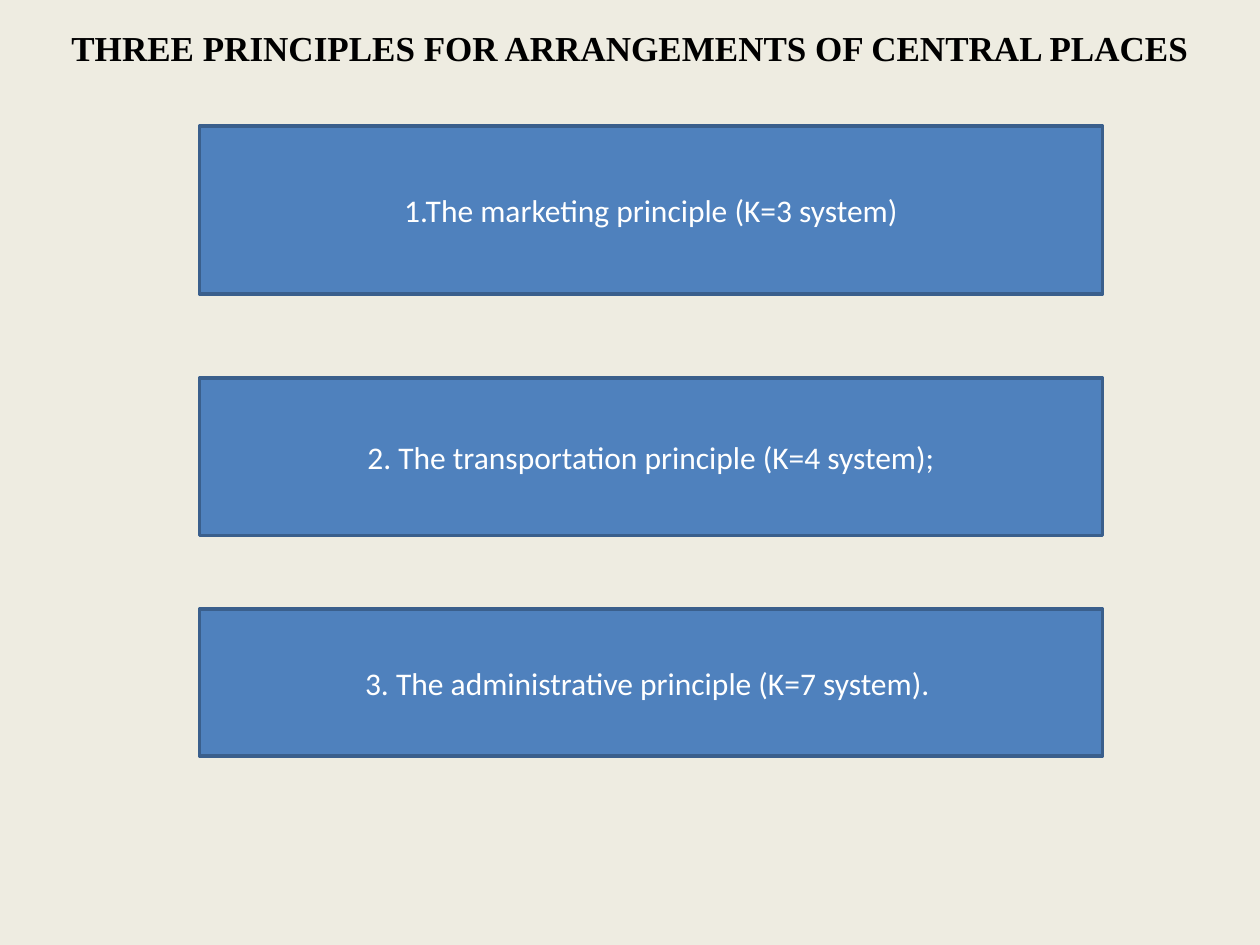
from dataclasses import dataclass

import pptx
import pptx.dml.color
import pptx.enum.shapes
import pptx.enum.text
import pptx.util

CELL = pptx.util.Inches(1) // 12  # the slide is a grid of 120 columns by 90 rows
COLUMNS, ROWS = 120, 90
BOX_COLUMN, BOX_COLUMNS = 19, 86


@dataclass
class Principle:
    text: str
    row: int
    rows: int


PRINCIPLES = [
    Principle("1.The marketing principle (K=3 system)", 12, 16),
    Principle("2. The transportation principle (K=4 system);", 36, 15),
    Principle("3. The administrative principle (K=7 system). ", 58, 14),
]


def color(value: str) -> pptx.dml.color.RGBColor:
    return pptx.dml.color.RGBColor.from_string(value)


def place(shape, column: int, row: int, columns: int, rows: int) -> None:
    shape.left, shape.top = column * CELL, row * CELL
    shape.width, shape.height = columns * CELL, rows * CELL


def write(shape, text: str, font: str, size: int, text_color: str, bold: bool = False) -> None:
    """Set one centred line of text in the middle of the shape."""
    frame = shape.text_frame
    frame.text = text
    frame.word_wrap = True
    frame.auto_size = pptx.enum.text.MSO_AUTO_SIZE.NONE
    frame.vertical_anchor = pptx.enum.text.MSO_ANCHOR.MIDDLE
    paragraph = frame.paragraphs[0]
    paragraph.alignment = pptx.enum.text.PP_ALIGN.CENTER
    run_font = paragraph.runs[0].font
    run_font.name = font
    run_font.size = pptx.util.Pt(size)
    run_font.bold = bold
    run_font.color.rgb = color(text_color)


def draw_principle(slide, principle: Principle) -> None:
    box = slide.shapes.add_shape(pptx.enum.shapes.MSO_SHAPE.RECTANGLE, 0, 0, CELL, CELL)
    place(box, BOX_COLUMN, principle.row, BOX_COLUMNS, principle.rows)
    box.shadow.inherit = False
    box.fill.solid()
    box.fill.fore_color.rgb = color("4F81BD")
    box.line.color.rgb = color("3A5F8C")
    box.line.width = pptx.util.Pt(2)
    write(box, principle.text, "Calibri", 18, "FFFFFF")


def main() -> None:
    presentation = pptx.Presentation()
    presentation.slide_width = COLUMNS * CELL
    presentation.slide_height = ROWS * CELL
    slide = presentation.slides.add_slide(presentation.slide_layouts.get_by_name("Title Only"))
    slide.background.fill.solid()
    slide.background.fill.fore_color.rgb = color("EEECE1")

    title = slide.shapes.title
    place(title, 3, -3, 114, 15)
    write(title, "THREE PRINCIPLES FOR ARRANGEMENTS OF CENTRAL PLACES",
          "Times New Roman", 20, "000000", bold=True)
    for principle in PRINCIPLES:
        draw_principle(slide, principle)
    presentation.save("out.pptx")


if __name__ == "__main__":
    main()
